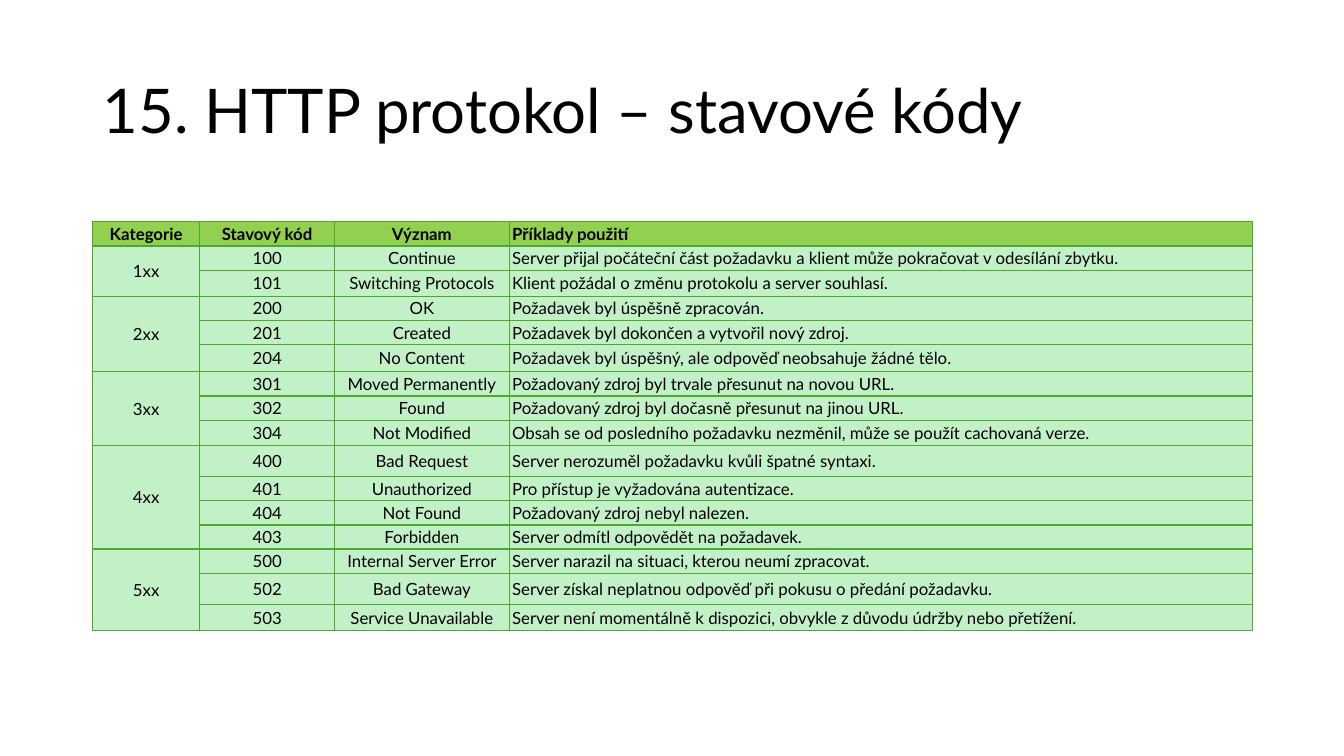
"""Build a slide with a table of HTTP status codes."""
from dataclasses import dataclass

from lxml import etree
from pptx import Presentation
from pptx import util as u
from pptx.dml.color import RGBColor
from pptx.enum import text
from pptx.oxml import ns

BLACK = RGBColor(0x00, 0x00, 0x00)
HEADER_GREEN = RGBColor(0x92, 0xD0, 0x50)
BODY_GREEN = RGBColor(0xC2, 0xF1, 0xC8)
BORDER_GREEN = RGBColor(0x4E, 0xA7, 0x2E)
FONT = "Lato"
HEADINGS = ("Kategorie", "Stavový kód", "Význam", "Příklady použití")
COLUMN_WIDTHS = (1.06, 1.34, 1.73, 7.37)
HEADER_HEIGHT = 0.22


@dataclass(frozen=True)
class Status:
    code: str
    meaning: str
    usage: str
    height: float = 0.22


CATEGORIES = {
    "1xx": (
        Status("100", "Continue", "Server přijal počáteční část požadavku a klient může pokračovat v odesílání zbytku."),
        Status("101", "Switching Protocols", "Klient požádal o změnu protokolu a server souhlasí.", 0.26),
    ),
    "2xx": (
        Status("200", "OK", "Požadavek byl úspěšně zpracován."),
        Status("201", "Created", "Požadavek byl dokončen a vytvořil nový zdroj."),
        Status("204", "No Content", "Požadavek byl úspěšný, ale odpověď neobsahuje žádné tělo.", 0.27),
    ),
    "3xx": (
        Status("301", "Moved Permanently", "Požadovaný zdroj byl trvale přesunut na novou URL.", 0.16),
        Status("302", "Found", "Požadovaný zdroj byl dočasně přesunut na jinou URL.", 0.19),
        Status("304", "Not Modified", "Obsah se od posledního požadavku nezměnil, může se použít cachovaná verze.", 0.25),
    ),
    "4xx": (
        Status("400", "Bad Request", "Server nerozuměl požadavku kvůli špatné syntaxi.", 0.31),
        Status("401", "Unauthorized", "Pro přístup je vyžadována autentizace."),
        Status("404", "Not Found", "Požadovaný zdroj nebyl nalezen."),
        Status("403", "Forbidden", "Server odmítl odpovědět na požadavek."),
    ),
    "5xx": (
        Status("500", "Internal Server Error", "Server narazil na situaci, kterou neumí zpracovat."),
        Status("502", "Bad Gateway", "Server získal neplatnou odpověď při pokusu o předání požadavku.", 0.31),
        Status("503", "Service Unavailable", "Server není momentálně k dispozici, obvykle z důvodu údržby nebo přetížení.", 0.26),
    ),
}


def write(frame, wording: str, *, size: float = 12, bold: bool = False,
          align=text.PP_ALIGN.LEFT, spacing: float = 1.0) -> None:
    paragraph = frame.paragraphs[0]
    paragraph.alignment = align
    paragraph.line_spacing = spacing
    run = paragraph.add_run()
    run.text = wording
    run.font.name = FONT
    run.font.size = u.Pt(size)
    run.font.bold = bold
    run.font.color.rgb = BLACK


def style_cell(cell, fill: RGBColor) -> None:
    cell.margin_left = cell.margin_right = u.Inches(0.03)
    cell.margin_top = cell.margin_bottom = u.Inches(0.02)
    cell.vertical_anchor = text.MSO_ANCHOR.MIDDLE
    properties = cell._tc.get_or_add_tcPr()
    for side in ("lnL", "lnR", "lnT", "lnB"):
        border = etree.SubElement(properties, ns.qn(f"a:{side}"), w=str(u.Pt(1)))
        paint = etree.SubElement(border, ns.qn("a:solidFill"))
        etree.SubElement(paint, ns.qn("a:srgbClr"), val=str(BORDER_GREEN))
    cell.fill.solid()
    cell.fill.fore_color.rgb = fill


def add_title(slide, wording: str) -> None:
    title = slide.shapes.add_textbox(u.Inches(0.92), u.Inches(0.4), u.Inches(11.5), u.Inches(1.45))
    frame = title.text_frame
    frame.word_wrap = True
    frame.vertical_anchor = text.MSO_ANCHOR.MIDDLE
    write(frame, wording, size=44, spacing=0.9)


def fill_row(table, row: int, values: tuple[str, ...], *, header: bool = False) -> None:
    for column, value in enumerate(values):
        cell = table.cell(row, column)
        style_cell(cell, HEADER_GREEN if header else BODY_GREEN)
        if value:
            last = column == len(HEADINGS) - 1
            align = text.PP_ALIGN.LEFT if last else text.PP_ALIGN.CENTER
            write(cell.text_frame, value, bold=header, align=align)


def add_status_table(slide) -> None:
    heights = [HEADER_HEIGHT] + [s.height for group in CATEGORIES.values() for s in group]
    table = slide.shapes.add_table(
        len(heights), len(HEADINGS), u.Inches(0.92), u.Inches(2.2),
        u.Inches(sum(COLUMN_WIDTHS)), u.Inches(sum(heights))).table
    table.horz_banding = False
    for column, width in zip(table.columns, COLUMN_WIDTHS):
        column.width = u.Inches(width)
    for table_row, height in zip(table.rows, heights):
        table_row.height = u.Inches(height)

    fill_row(table, 0, HEADINGS, header=True)
    row = 1
    for category, statuses in CATEGORIES.items():
        table.cell(row, 0).merge(table.cell(row + len(statuses) - 1, 0))
        for index, status in enumerate(statuses):
            label = category if index == 0 else ""
            fill_row(table, row + index, (label, status.code, status.meaning, status.usage))
        row += len(statuses)


def main() -> None:
    deck = Presentation()
    deck.slide_width = u.Inches(13.33)
    deck.slide_height = u.Inches(7.5)
    slide = deck.slides.add_slide(deck.slide_layouts[6])
    add_title(slide, "15. HTTP protokol – stavové kódy")
    add_status_table(slide)
    deck.save("out.pptx")


if __name__ == "__main__":
    main()
